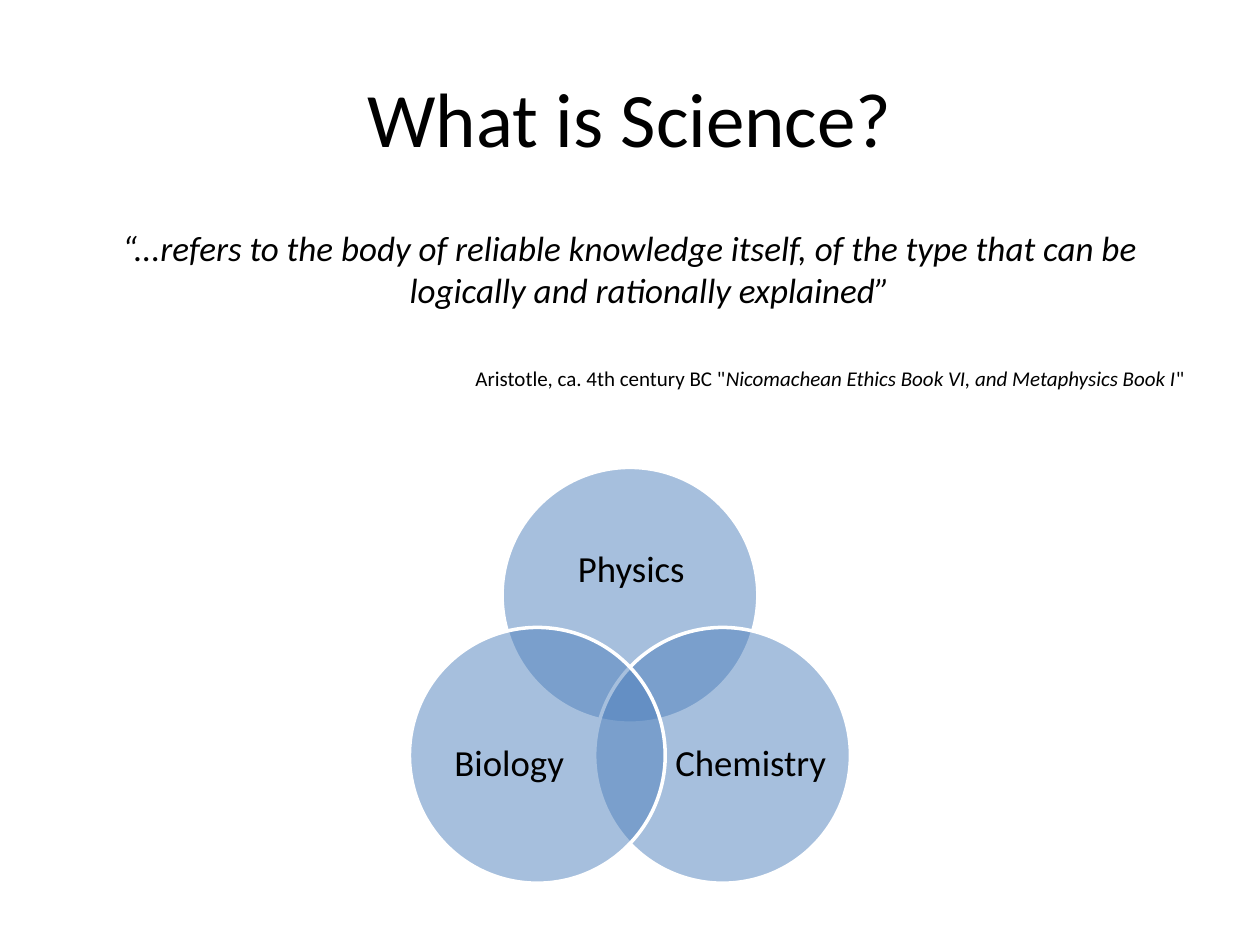
import pptx
import pptx.util
import pptx.dml.color
import pptx.enum.shapes
import pptx.enum.text
import pptx.oxml.ns
import lxml.etree

FONT = "Calibri"
ALIGN = pptx.enum.text.PP_ALIGN
MIDDLE = pptx.enum.text.MSO_ANCHOR.MIDDLE


def colour(value):
    return pptx.dml.color.RGBColor.from_string(value)


def place(shape, box):
    shape.left, shape.top, shape.width, shape.height = map(pptx.util.Inches, box)


def format_run(run, size, italic=False):
    run.font.name = FONT
    run.font.size = pptx.util.Pt(size)
    run.font.italic = italic
    run.font.color.rgb = colour("000000")


def add_title(slide, box, text):
    title = slide.shapes.title
    place(title, box)
    title.text_frame.text = text
    title.text_frame.vertical_anchor = MIDDLE
    paragraph = title.text_frame.paragraphs[0]
    paragraph.alignment = ALIGN.CENTER
    format_run(paragraph.runs[0], 44)


def format_quote_paragraph(paragraph, alignment, space_before):
    paragraph.alignment = alignment
    paragraph.space_before = pptx.util.Pt(space_before)
    properties = paragraph._p.get_or_add_pPr()
    indent = pptx.util.Inches(0.38)
    properties.set("marL", str(indent))
    properties.set("indent", str(-indent))
    lxml.etree.SubElement(properties, pptx.oxml.ns.qn("a:buNone"))


def add_quote(slide, box, quote, source_parts):
    body = slide.placeholders[1]
    place(body, box)
    frame = body.text_frame
    frame.text = quote
    frame.auto_size = pptx.enum.text.MSO_AUTO_SIZE.NONE
    format_quote_paragraph(frame.paragraphs[0], ALIGN.CENTER, 4)
    format_run(frame.paragraphs[0].runs[0], 20, True)
    source = frame.add_paragraph()
    format_quote_paragraph(source, ALIGN.RIGHT, 31)
    for text, italic in source_parts:
        run = source.add_run()
        run.text = text
        format_run(run, 12, italic)


def add_circle(shapes, box):
    circle = shapes.add_shape(
        pptx.enum.shapes.MSO_SHAPE.OVAL, *map(pptx.util.Inches, box))
    circle.shadow.inherit = False
    circle.fill.solid()
    circle.fill.fore_color.rgb = colour("4F81BD")
    fill_colour = circle._element.spPr.find(".//" + pptx.oxml.ns.qn("a:srgbClr"))
    lxml.etree.SubElement(fill_colour, pptx.oxml.ns.qn("a:alpha"), val="50000")
    circle.line.color.rgb = colour("FFFFFF")
    circle.line.width = pptx.util.Pt(2)


def add_label(shapes, box, text):
    label = shapes.add_textbox(*map(pptx.util.Inches, box))
    frame = label.text_frame
    frame.text = text
    frame.word_wrap = True
    frame.vertical_anchor = MIDDLE
    frame.margin_left = frame.margin_right = 0
    frame.margin_top = frame.margin_bottom = 0
    paragraph = frame.paragraphs[0]
    paragraph.alignment = ALIGN.CENTER
    paragraph.line_spacing = 0.9
    format_run(paragraph.runs[0], 21)


def add_venn(slide, box, circles):
    left, top, width, height = box
    diameter = 0.58 * width
    group = slide.shapes.add_group_shape()
    for text, across, down, label_share in circles:
        circle_left = left + across * (width - diameter)
        circle_top = top + down * (height - diameter)
        add_circle(group.shapes, (circle_left, circle_top, diameter, diameter))
        share_left, share_top, share_width, share_height = label_share
        add_label(group.shapes, (circle_left + share_left * diameter,
                                 circle_top + share_top * diameter,
                                 share_width * diameter,
                                 share_height * diameter), text)


def main():
    presentation = pptx.Presentation()
    presentation.slide_width = pptx.util.Inches(10)
    presentation.slide_height = pptx.util.Inches(7.5)
    slide = presentation.slides.add_slide(presentation.slide_layouts[1])
    add_title(slide, (0.5, 0.3, 9, 1.25), "What is Science?")
    add_quote(
        slide, (0.5, 1.75, 9, 1.76),
        "“...refers to the body of reliable knowledge itself, of the type "
        "that can be logically and rationally explained” ",
        [('Aristotle, ca. 4th century BC "', False),
         ("Nicomachean Ethics Book VI, and Metaphysics Book I", True),
         ('"', False)])
    add_venn(slide, (3.25, 3.71, 3.5, 3.3), [
        ("Physics", 0.5, 0, (0.14, 0.18, 0.73, 0.45)),
        ("Chemistry", 1, 1, (0.31, 0.26, 0.6, 0.55)),
        ("Biology", 0, 1, (0.09, 0.26, 0.6, 0.55))])
    presentation.save("out.pptx")


if __name__ == "__main__":
    main()
